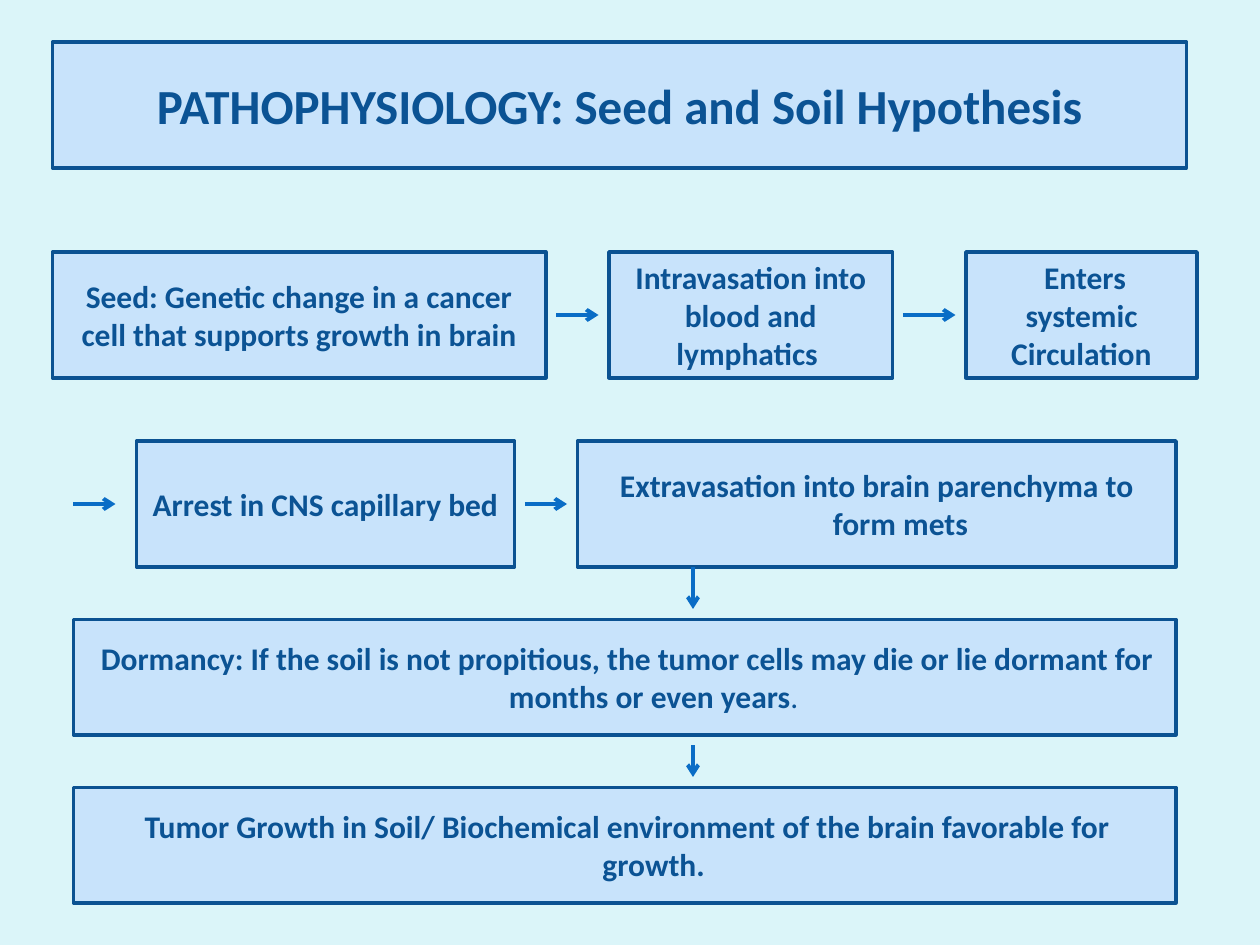
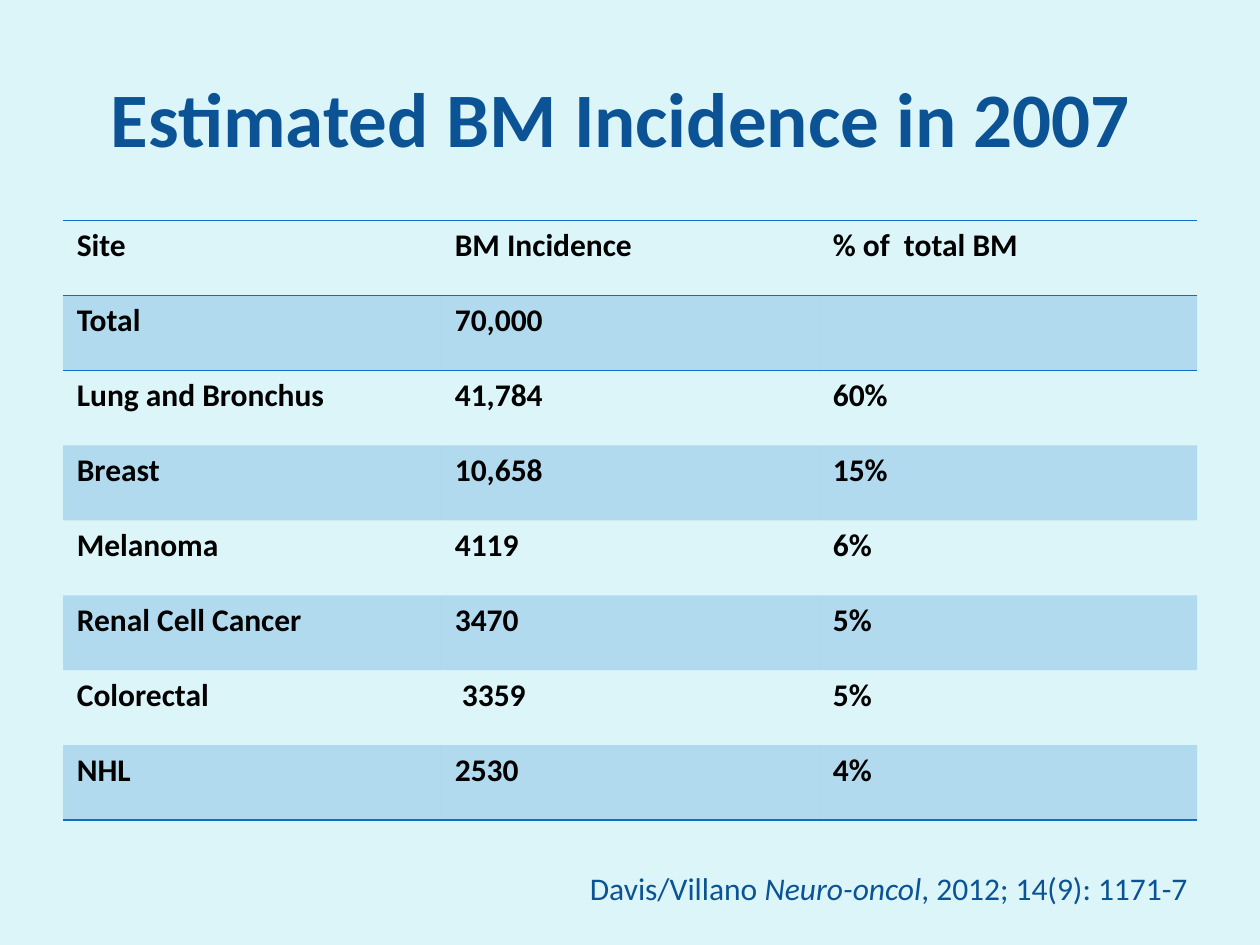
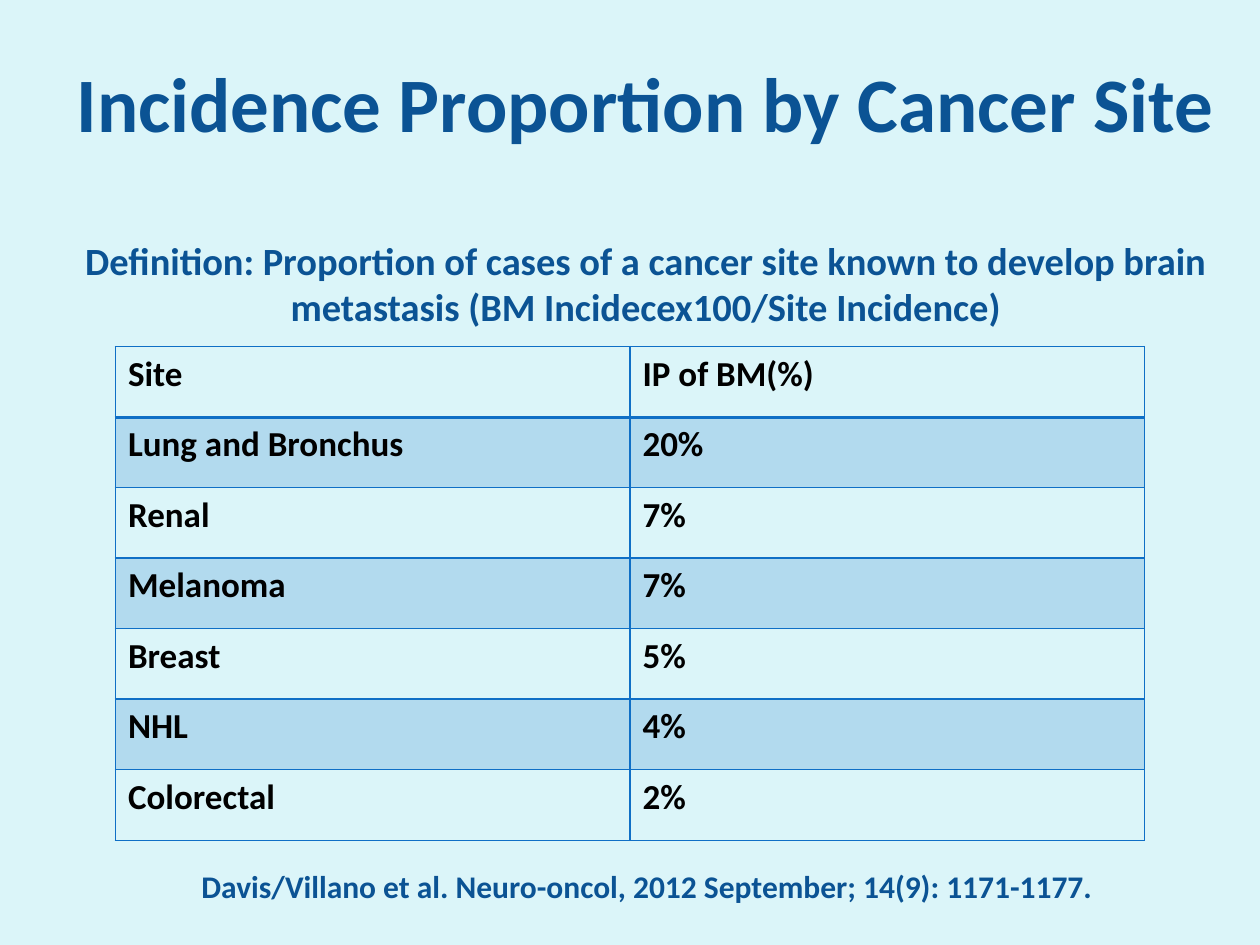
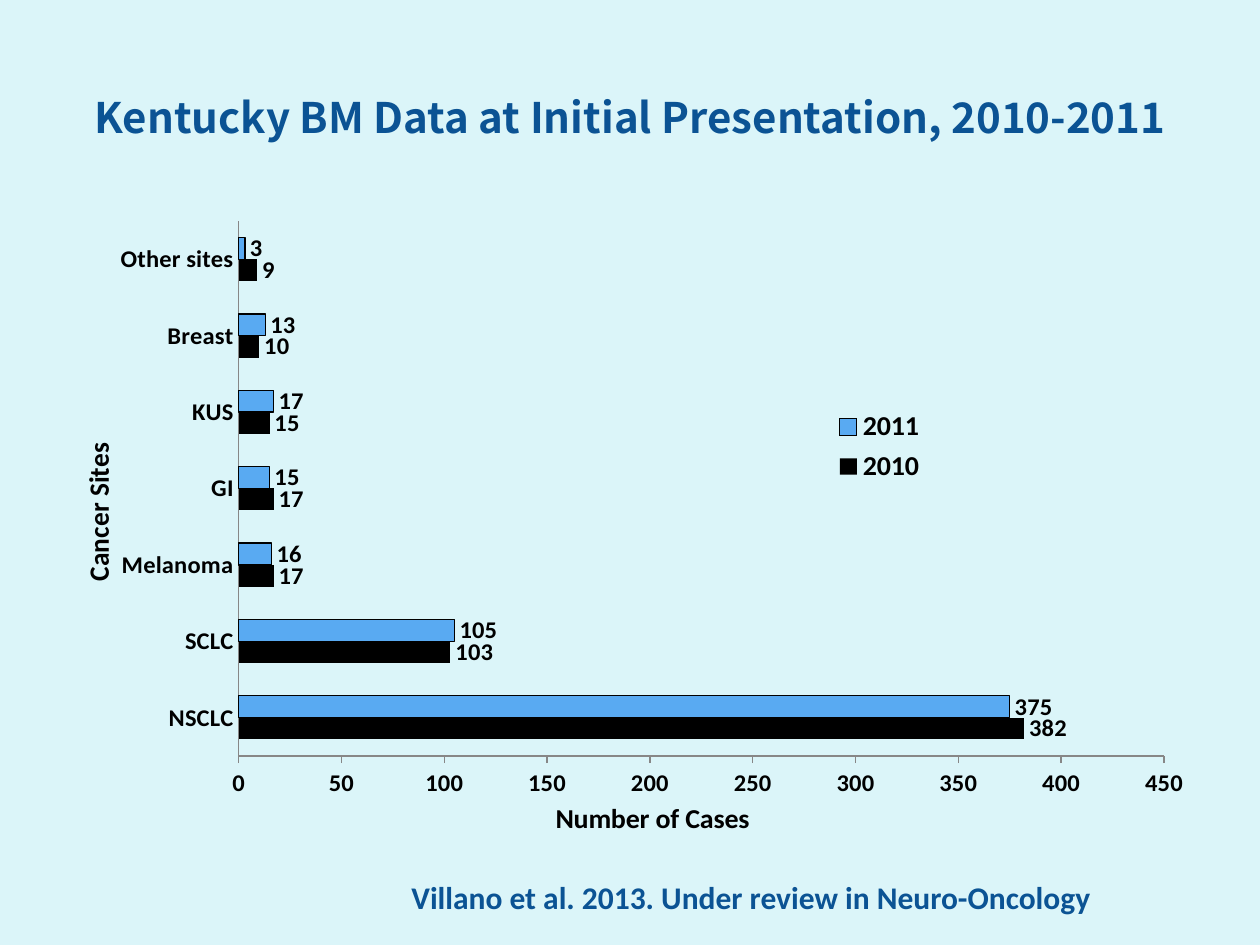
from dataclasses import dataclass

from lxml import etree
from pptx import Presentation
from pptx.chart.data import CategoryChartData
from pptx.dml.color import RGBColor
from pptx.enum.chart import XL_CHART_TYPE as ChartType
from pptx.enum.chart import XL_LABEL_POSITION as LabelPos
from pptx.enum.chart import XL_LEGEND_POSITION as LegendPos
from pptx.enum.chart import XL_TICK_MARK as Tick
from pptx.enum.shapes import MSO_CONNECTOR as Connector
from pptx.enum.shapes import MSO_SHAPE as Shape
from pptx.enum.text import MSO_ANCHOR as Anchor
from pptx.enum.text import PP_ALIGN as Align
from pptx.oxml import parse_xml
from pptx.oxml.ns import nsdecls, qn
from pptx.util import Pt

FONT = "Calibri"
TITLE_FONT_CJK = "Noto Sans CJK SC"
BACKGROUND, BOX_FILL, BOX_LINE = "DBF5F9", "C8E3FB", "0B5292"
NAVY, BLUE, ARROW, BLACK = "0B5394", "0F6FC6", "0A6DC6", "000000"
BAR_2011, AXIS_GREY = "59AAF2", "878787"
NO_STYLE_ID = "{2D5ABB26-0587-4C30-8999-92F81FD0307C}"
ARROW_GAP = 6


@dataclass(frozen=True)
class Span:
    """A run of text with its own emphasis."""
    text: str
    bold: bool = True
    italic: bool = False
    size: float = 18


@dataclass(frozen=True)
class Area:
    left: float
    top: float
    width: float
    height: float

    @property
    def right(self) -> float:
        return self.left + self.width

    @property
    def bottom(self) -> float:
        return self.top + self.height

    def lengths(self) -> tuple:
        return Pt(self.left), Pt(self.top), Pt(self.width), Pt(self.height)


@dataclass(frozen=True)
class Step:
    area: Area
    spans: tuple
    hanging: tuple = (0, 0)


@dataclass(frozen=True)
class TableLook:
    area: Area
    size: float
    side_inset: float
    full_grid: bool
    header_rule: float


TITLE_AREA = Area(36, 21.6, 648, 90)


def rgb(color: str) -> RGBColor:
    return RGBColor.from_string(color)


def style_font(font, size: float, color: str, bold: bool = True, name: str = FONT) -> None:
    font.size, font.bold, font.name = Pt(size), bold, name
    font.color.rgb = rgb(color)


def write_spans(paragraph, spans: tuple, name: str = FONT) -> None:
    for span in spans:
        run = paragraph.add_run()
        run.text = span.text
        style_font(run.font, span.size, NAVY, span.bold, name)
        if span.italic:
            run.font.italic = True


def new_slide(deck):
    slide = deck.slides.add_slide(deck.slide_layouts[6])
    slide.background.fill.solid()
    slide.background.fill.fore_color.rgb = rgb(BACKGROUND)
    return slide


def add_label(slide, area: Area, spans: tuple, wrap: bool = True):
    frame = slide.shapes.add_textbox(*area.lengths()).text_frame
    frame.word_wrap = wrap
    write_spans(frame.paragraphs[0], spans)
    return frame


def add_title(slide, text: str, size: float = 44, name: str = FONT,
              area: Area = TITLE_AREA):
    frame = slide.shapes.add_textbox(*area.lengths()).text_frame
    frame.word_wrap = True
    frame.vertical_anchor = Anchor.MIDDLE
    heading = frame.paragraphs[0]
    heading.alignment = Align.CENTER
    write_spans(heading, (Span(text, size=size),), name)
    return frame


def add_step(slide, step: Step) -> None:
    box = slide.shapes.add_shape(Shape.RECTANGLE, *step.area.lengths())
    box.shadow.inherit = False
    box.fill.solid()
    box.fill.fore_color.rgb = rgb(BOX_FILL)
    box.line.color.rgb = rgb(BOX_LINE)
    box.line.width = Pt(2)
    frame = box.text_frame
    frame.word_wrap = True
    frame.vertical_anchor = Anchor.MIDDLE
    paragraph = frame.paragraphs[0]
    paragraph.alignment = Align.CENTER
    margin, indent = step.hanging
    if margin:
        properties = paragraph._p.get_or_add_pPr()
        properties.set("marL", str(Pt(margin)))
        properties.set("indent", str(Pt(indent)))
    write_spans(paragraph, step.spans)


def add_arrow(slide, x1: float, y1: float, x2: float, y2: float) -> None:
    arrow = slide.shapes.add_connector(Connector.STRAIGHT, Pt(x1), Pt(y1), Pt(x2), Pt(y2))
    arrow.line.color.rgb = rgb(ARROW)
    arrow.line.width = Pt(2.25)
    etree.SubElement(arrow.line._get_or_add_ln(), qn("a:tailEnd"), type="arrow")
    etree.SubElement(arrow._element.spPr, qn("a:effectLst"))


def set_border(cell, side: str, width: float) -> None:
    """Draw one cell edge; side is L, R, T or B."""
    cell._tc.get_or_add_tcPr().append(parse_xml(
        f'<a:ln{side} {nsdecls("a")} w="{Pt(width)}"><a:solidFill>'
        f'<a:srgbClr val="{BLUE}"/></a:solidFill></a:ln{side}>'))


def cell_borders(row: int, last_row: int, look: TableLook) -> dict:
    """Edge widths in the order the schema asks for: L, R, T, B."""
    if look.full_grid:
        return {"L": 1, "R": 1,
                "T": look.header_rule if row == 1 else 1,
                "B": look.header_rule if row == 0 else 1}
    edges = {}
    if row <= 1:
        edges["T"] = look.header_rule
    if row in (0, last_row):
        edges["B"] = look.header_rule
    return edges


def add_data_table(slide, rows: list, look: TableLook) -> None:
    table = slide.shapes.add_table(len(rows), len(rows[0]), *look.area.lengths()).table
    table._tbl.tblPr.find(qn("a:tableStyleId")).text = NO_STYLE_ID
    table.first_row = table.horz_banding = False
    for column in table.columns:
        column.width = Pt(look.area.width / len(rows[0]))
    for r, values in enumerate(rows):
        table.rows[r].height = Pt(look.area.height / len(rows))
        for c, value in enumerate(values):
            cell = table.cell(r, c)
            cell.margin_left = cell.margin_right = Pt(look.side_inset)
            cell.margin_top = cell.margin_bottom = Pt(3.6)
            paragraph = cell.text_frame.paragraphs[0]
            paragraph.text = value
            style_font(paragraph.font, look.size, BLACK)
            for run in paragraph.runs:
                style_font(run.font, look.size, BLACK)
            for side, width in cell_borders(r, len(rows) - 1, look).items():
                set_border(cell, side, width)
            if r % 2:
                cell.fill.solid()
                cell.fill.fore_color.rgb = rgb(BLUE)
                tint = cell._tc.tcPr.find(qn("a:solidFill")).find(qn("a:srgbClr"))
                etree.SubElement(tint, qn("a:alpha"), val="20000")
            else:
                cell.fill.background()


def place(element, inner: bool = False, **fractions: float) -> None:
    """Give a chart part a fixed position, in fractions of the chart."""
    old = element.find(qn("c:layout"))
    target = '<c:layoutTarget val="inner"/>' if inner else ""
    modes = "".join(f'<c:{k}Mode val="edge"/>' for k in ("x", "y"))
    values = "".join(f'<c:{k} val="{v}"/>' for k, v in fractions.items())
    layout = parse_xml(f'<c:layout {nsdecls("c")}><c:manualLayout>{target}{modes}{values}'
                       '</c:manualLayout></c:layout>')
    if old is not None:
        element.replace(old, layout)
    elif inner:
        element.insert(0, layout)
    else:
        first = element.find(qn("c:tx"))
        if first is None:
            first = element.find(qn("c:legendPos"))
        first.addnext(layout)


def style_axis(axis, title: str, tick, x: float, y: float) -> None:
    axis.has_major_gridlines = False
    axis.major_tick_mark, axis.minor_tick_mark = tick, Tick.NONE
    axis.format.line.color.rgb = rgb(AXIS_GREY)
    style_font(axis.tick_labels.font, 14, BLACK)
    axis.axis_title.text_frame.text = title
    style_font(axis.axis_title.text_frame.paragraphs[0].runs[0].font, 16, BLACK)
    place(axis.axis_title._element, x=x, y=y)


def seed_and_soil(deck) -> None:
    slide = new_slide(deck)
    seed = Step(Area(30, 144, 282, 72), (Span(
        "Seed: Genetic change in a cancer cell that supports growth in brain"),))
    intravasation = Step(Area(348, 144, 162, 72), (Span(
        "Intravasation into blood and lymphatics "),))
    circulation = Step(Area(552, 144, 132, 72), (Span(" Enters systemic Circulation"),))
    arrest = Step(Area(78, 252, 216, 72), (Span("Arrest in CNS capillary bed"),))
    extravasation = Step(Area(330, 252, 342, 72), (Span(
        "Extravasation into brain parenchyma to form mets"),), (27, -27))
    dormancy = Step(Area(42, 354, 630, 66), (
        Span("Dormancy: If the soil is not propitious, the tumor cells may die "
             "or lie dormant for months or even years"),
        Span(".", bold=False)), (33, -30))
    growth = Step(Area(42, 450, 630, 66), (Span(
        "Tumor Growth in Soil/ Biochemical environment of the brain favorable for growth."),),
        (33, -30))
    heading = Step(Area(30, 24, 648, 72), (Span(
        "PATHOPHYSIOLOGY: Seed and Soil Hypothesis", size=28),))
    for step in (seed, intravasation, circulation, heading, arrest,
                 extravasation, dormancy, growth):
        add_step(slide, step)

    for before, after in ((seed, intravasation), (intravasation, circulation),
                          (arrest, extravasation)):
        middle = before.area.top + before.area.height / 2
        add_arrow(slide, before.area.right + ARROW_GAP, middle,
                  after.area.left - ARROW_GAP, middle)
    add_arrow(slide, 42, 288, 66, 288)
    for start, after in ((extravasation.area.bottom, dormancy),
                         (dormancy.area.bottom + ARROW_GAP, growth)):
        add_arrow(slide, 396, start, 396, after.area.top - ARROW_GAP)


def estimated_incidence(deck) -> None:
    slide = new_slide(deck)
    add_title(slide, "Estimated BM Incidence in 2007 ")
    add_data_table(slide, [
        ("Site", "BM Incidence", "% of  total BM"),
        ("Total", "70,000", ""),
        ("Lung and Bronchus", "41,784", "60%"),
        ("Breast", "10,658", "15%"),
        ("Melanoma", "4119", "6%"),
        ("Renal Cell Cancer", "3470", "5%"),
        ("Colorectal", " 3359", "5%"),
        ("NHL", "2530", "4%"),
    ], TableLook(Area(36, 126, 648, 342.72), 18, 7.92, False, 1))
    add_label(slide, Area(330, 493.2, 390, 28.8), (
        Span("Davis/Villano ", bold=False),
        Span("Neuro-oncol", bold=False, italic=True),
        Span(", 2012; 14(9): 1171-7", bold=False)))


def incidence_proportion(deck) -> None:
    slide = new_slide(deck)
    frame = add_title(slide, "Incidence Proportion by Cancer Site",
                      area=Area(36, 21.6, 666, 176.4))
    definition = frame.add_paragraph()
    definition.alignment = Align.CENTER
    definition.space_before = Pt(51)
    write_spans(definition, (Span(
        "Definition: Proportion of cases of a cancer site known to develop brain "
        "metastasis (BM Incidecex100/Site Incidence)", size=22),))
    add_data_table(slide, [
        ("Site", "IP of BM(%)"),
        ("Lung and Bronchus", "20%"),
        ("Renal", "7%"),
        ("Melanoma", "7%"),
        ("Breast", "5%"),
        ("NHL", "4%"),
        ("Colorectal", "2%"),
    ], TableLook(Area(66, 198, 588, 282.24), 20, 7.2, True, 2))
    add_label(slide, Area(108, 492, 588, 28.8), (Span(
        "Davis/Villano et al. Neuro-oncol, 2012 September; 14(9): 1171-1177."),))


def kentucky_data(deck) -> None:
    slide = new_slide(deck)
    add_title(slide, "Kentucky BM Data at Initial Presentation, 2010-2011", 24, TITLE_FONT_CJK)
    cases = CategoryChartData()
    cases.categories = ["NSCLC", "SCLC", "Melanoma", "GI", "KUS", "Breast", "Other sites"]
    cases.add_series("2010", (382, 103, 17, 17, 15, 10, 9))
    cases.add_series("2011", (375, 105, 16, 15, 17, 13, 3))
    chart = slide.shapes.add_chart(
        ChartType.BAR_CLUSTERED, *Area(36, 126, 648, 356.4).lengths(), cases).chart
    chart.has_title = False
    style_font(chart.font, 10, BLACK, bold=False)
    place(chart._chartSpace.chart.plotArea, inner=True, x=0.155, y=0.0, w=0.816, h=0.877)

    plot = chart.plots[0]
    plot.gap_width, plot.overlap = 150, 0
    plot.vary_by_categories = False
    for series, color in zip(plot.series, (BLACK, BAR_2011)):
        series.format.fill.solid()
        series.format.fill.fore_color.rgb = rgb(color)
        labels = series.data_labels
        labels.show_value = True
        labels.position = LabelPos.OUTSIDE_END
        style_font(labels.font, 14, BLACK)
    outline = plot.series[1].format.line
    outline.color.rgb = rgb(BLACK)
    outline.width = Pt(0.75)

    style_axis(chart.category_axis, "Cancer Sites", Tick.NONE, 0.01, 0.36)
    style_axis(chart.value_axis, "Number of Cases", Tick.OUTSIDE, 0.43, 0.94)
    chart.value_axis.minimum_scale, chart.value_axis.maximum_scale = 0, 450
    chart.value_axis.major_unit = 50

    chart.has_legend = True
    chart.legend.position = LegendPos.RIGHT
    chart.legend.include_in_layout = False
    style_font(chart.legend.font, 16, BLACK)
    place(chart.legend._element, x=0.67, y=0.3, w=0.1, h=0.14)

    add_label(slide, Area(228, 498, 409.68, 28.8), (Span(
        "Villano et al. 2013. Under review in Neuro-Oncology"),), wrap=False)


def main() -> None:
    deck = Presentation()
    deck.slide_width, deck.slide_height = Pt(720), Pt(540)
    for build in (seed_and_soil, estimated_incidence, incidence_proportion, kentucky_data):
        build(deck)
    deck.save("out.pptx")


if __name__ == "__main__":
    main()
